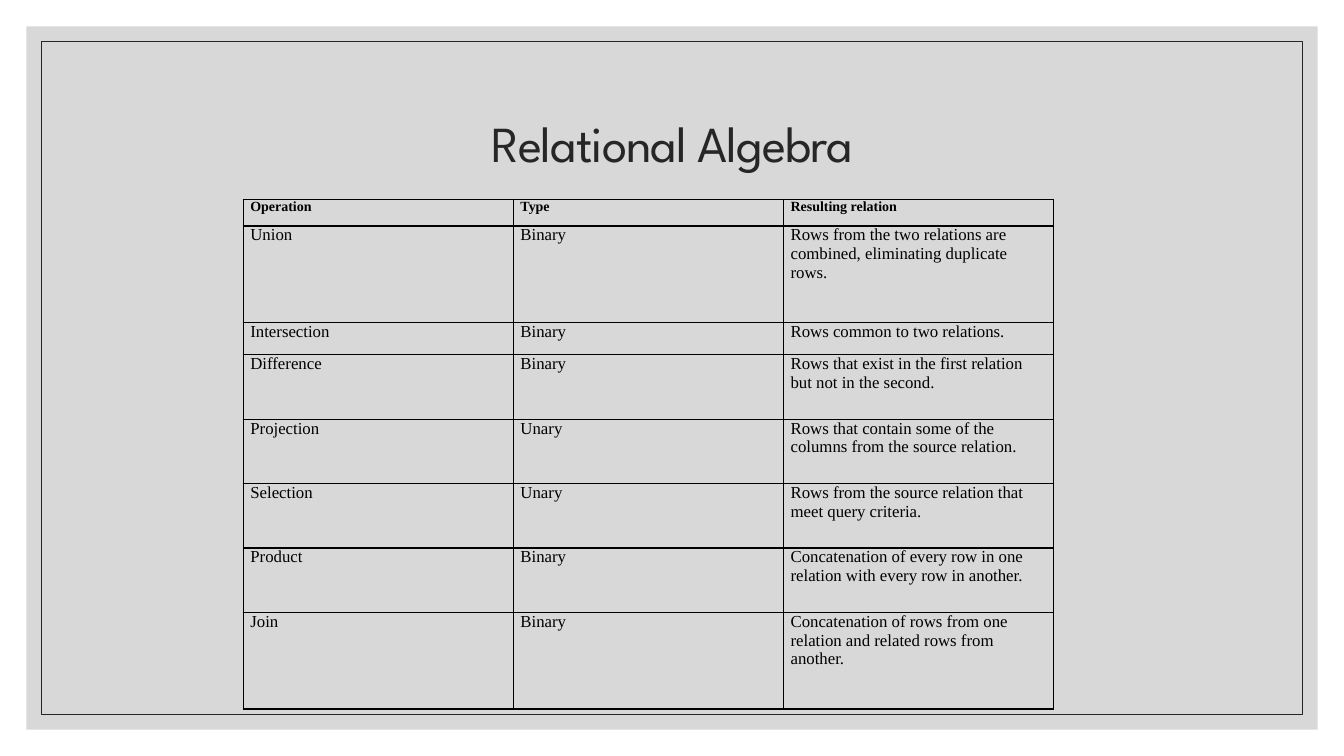
"""Build the Relational Algebra slide: a framed page with a title and a table of operations."""
from dataclasses import dataclass
from typing import NamedTuple

from lxml.etree import SubElement
from pptx import Presentation
from pptx.dml.color import RGBColor
from pptx.enum.shapes import MSO_SHAPE as Preset
from pptx.enum.text import MSO_ANCHOR as Anchor, PP_ALIGN as Align
from pptx.oxml import parse_xml
from pptx.oxml.ns import nsdecls, qn
from pptx.shapes.autoshape import Shape
from pptx.slide import Slide
from pptx.table import _Cell as Cell
from pptx.util import Inches, Length, Pt

SLIDE_WIDTH, SLIDE_HEIGHT = Inches(13.33), Inches(7.5)


@dataclass(frozen=True)
class Theme:
    """Colours, fonts and type sizes of the slide."""
    panel: RGBColor = RGBColor(0xBF, 0xBF, 0xBF)
    panel_opacity: int = 60
    dark: RGBColor = RGBColor(0x26, 0x26, 0x26)
    table_ink: RGBColor = RGBColor(0, 0, 0)
    title_font: str = "League Spartan"
    table_font: str = "Times New Roman"
    title_size: Length = Pt(36)
    title_spacing: int = -70
    header_size: Length = Pt(10)
    body_size: Length = Pt(12)
    frame_line: Length = Pt(0.5)
    table_line: Length = Pt(1)


class Operation(NamedTuple):
    """One table row; its height is counted in row units."""
    name: str
    kind: str
    result: str
    units: int


THEME = Theme()
HEADINGS = ("Operation", "Type", "Resulting relation")
OPERATIONS = (
    Operation("Union", "Binary",
              "Rows from the two relations are combined, eliminating duplicate rows.", 3),
    Operation("Intersection", "Binary", "Rows common to two relations.", 1),
    Operation("Difference", "Binary",
              "Rows that exist in the first relation but not in the second.", 2),
    Operation("Projection", "Unary",
              "Rows that contain some of the columns from the source relation.", 2),
    Operation("Selection", "Unary", "Rows from the source relation that meet query criteria.", 2),
    Operation("Product", "Binary",
              "Concatenation of every row in one relation with every row in another.", 2),
    Operation("Join", "Binary",
              "Concatenation of rows from one relation and related rows from another.", 3),
)


def across(percent: float) -> Length:
    """Return a percentage of the slide's width."""
    return Length(round(SLIDE_WIDTH * percent / 100))


def down(percent: float) -> Length:
    """Return a percentage of the slide's height."""
    return Length(round(SLIDE_HEIGHT * percent / 100))


def add_frame(slide: Slide, margin: Length) -> Shape:
    """Add a rectangle with the same margin on all sides."""
    frame = slide.shapes.add_shape(Preset.RECTANGLE, margin, margin,
                                   SLIDE_WIDTH - 2 * margin, SLIDE_HEIGHT - 2 * margin)
    frame.shadow.inherit = False
    return frame


def add_background(slide: Slide) -> None:
    """Add the translucent panel and the thin outline inside it."""
    panel = add_frame(slide, down(3.5))
    panel.fill.solid()
    panel.fill.fore_color.rgb = THEME.panel
    panel.line.fill.background()
    colour = panel.fill._xPr.find(f".//{qn('a:srgbClr')}")
    SubElement(colour, qn("a:alpha"), val=str(THEME.panel_opacity * 1000))

    outline = add_frame(slide, down(5.5))
    outline.fill.background()
    outline.line.color.rgb = THEME.dark
    outline.line.width = THEME.frame_line


def add_title(slide: Slide, text: str) -> None:
    """Add the centred slide title."""
    box = slide.shapes.add_textbox(across(8.75), down(9.33), across(82.5), down(20))
    box.text_frame.word_wrap = True
    box.text_frame.vertical_anchor = Anchor.MIDDLE
    paragraph = box.text_frame.paragraphs[0]
    paragraph.alignment = Align.CENTER
    paragraph.line_spacing = 0.9
    run = paragraph.add_run()
    run.text = text
    run.font.name = THEME.title_font
    run.font.size = THEME.title_size
    run.font.color.rgb = THEME.dark
    run.font._element.set("spc", str(THEME.title_spacing))


def add_borders(cell: Cell) -> None:
    """Draw a solid line on each side of a table cell."""
    properties = cell._tc.get_or_add_tcPr()
    for index, side in enumerate(("lnL", "lnR", "lnT", "lnB")):
        properties.insert(index, parse_xml(
            f'<a:{side} {nsdecls("a")} w="{THEME.table_line}"><a:solidFill>'
            f'<a:srgbClr val="{THEME.table_ink}"/></a:solidFill></a:{side}>'))


def fill_cell(cell: Cell, text: str, is_header: bool) -> None:
    """Write and style one table cell."""
    cell.text = text
    cell.margin_left = cell.margin_right = across(0.53)
    cell.margin_top = cell.margin_bottom = 0
    cell.fill.background()
    add_borders(cell)
    font = cell.text_frame.paragraphs[0].font
    font.name = THEME.table_font
    font.size = THEME.header_size if is_header else THEME.body_size
    font.bold = is_header
    font.color.rgb = THEME.table_ink


def add_operations(slide: Slide) -> None:
    """Add the table of relational operations."""
    row_unit = down(4.26)
    heights = [down(3.5)] + [row_unit * operation.units for operation in OPERATIONS]
    rows = [HEADINGS] + [operation[:3] for operation in OPERATIONS]
    table = slide.shapes.add_table(len(rows), len(HEADINGS), across(18.1), down(26.4),
                                   across(60.3), sum(heights)).table
    table.first_row = table.horz_banding = False
    for row_index, (texts, height) in enumerate(zip(rows, heights)):
        table.rows[row_index].height = height
        for column_index, text in enumerate(texts):
            fill_cell(table.cell(row_index, column_index), text, row_index == 0)


def main() -> None:
    """Build and save the presentation."""
    presentation = Presentation()
    presentation.slide_width, presentation.slide_height = SLIDE_WIDTH, SLIDE_HEIGHT
    slide = presentation.slides.add_slide(presentation.slide_layouts[6])
    add_background(slide)
    add_title(slide, "Relational Algebra")
    add_operations(slide)
    presentation.save("out.pptx")


if __name__ == "__main__":
    main()
